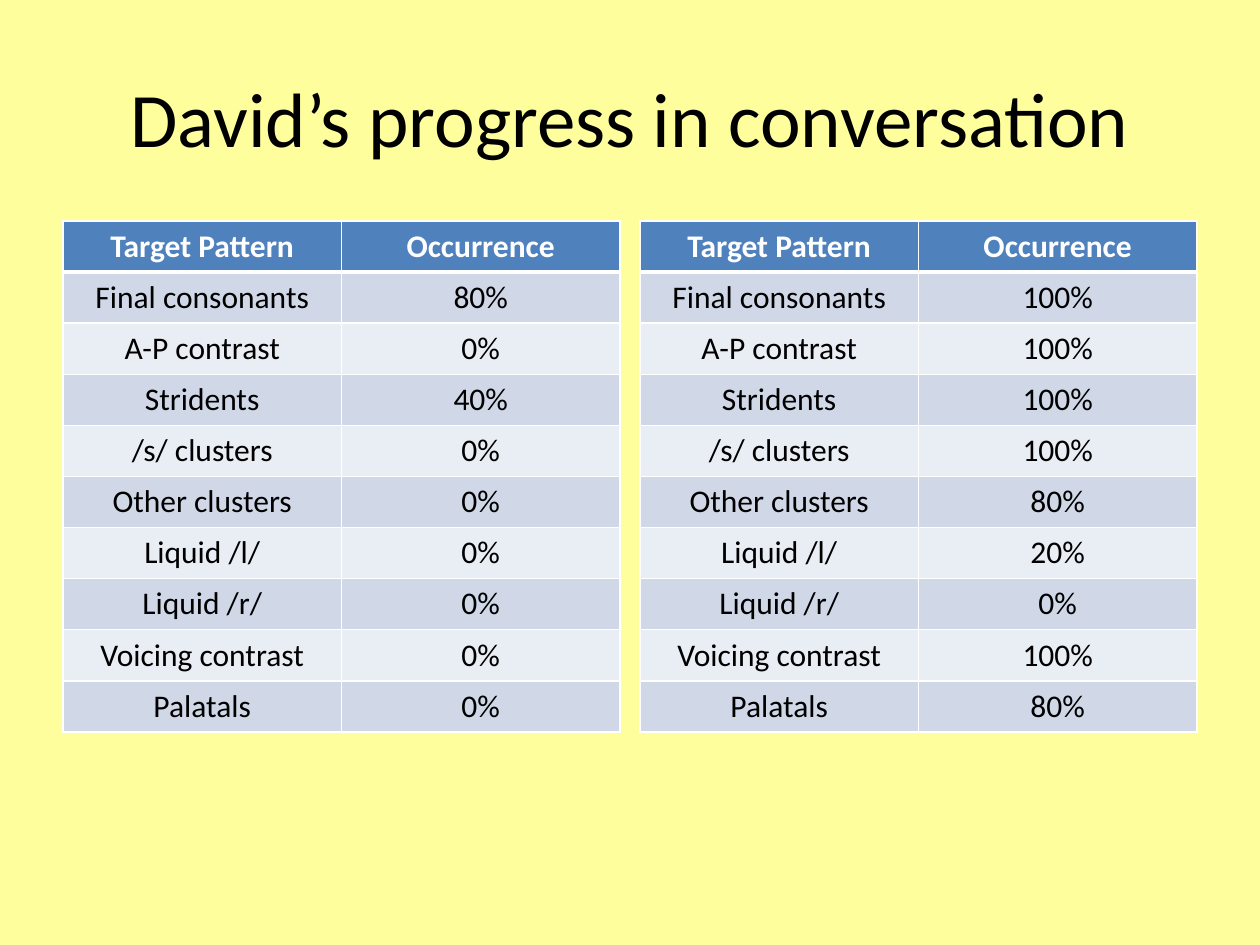
from lxml import etree
from pptx import Presentation
from pptx.dml.color import RGBColor
from pptx.enum.text import MSO_ANCHOR, PP_ALIGN
from pptx.oxml.ns import qn
from pptx.util import Pt

EMU_PER_PX = 914400 // 126
CENTER = PP_ALIGN.CENTER
MIDDLE = MSO_ANCHOR.MIDDLE

FONT = "Calibri"
PALE_YELLOW = RGBColor(0xFE, 0xFE, 0x9D)
BLACK = RGBColor(0x00, 0x00, 0x00)
WHITE = RGBColor(0xFF, 0xFF, 0xFF)
HEADER_BLUE = RGBColor(0x4F, 0x81, 0xBD)
BANDS = (RGBColor(0xD0, 0xD8, 0xE8), RGBColor(0xE9, 0xED, 0xF4))

HEADER = ("Target Pattern", "Occurrence")
PATTERNS = (
    "Final consonants", "A-P contrast", "Stridents", "/s/ clusters",
    "Other clusters", "Liquid /l/", "Liquid /r/", "Voicing contrast", "Palatals",
)
EARLIER = (80, 0, 40, 0, 0, 0, 0, 0, 0)
LATER = (100, 100, 100, 100, 80, 20, 0, 100, 80)

MARGIN = 63
TABLE_TOP = 221
TABLE_WIDTH = 557
TABLE_HEIGHT = 511
TABLE_GAP = 20


def px(length):
    return length * EMU_PER_PX


def format_text(text_frame, size, color, bold=False):
    for paragraph in text_frame.paragraphs:
        paragraph.alignment = CENTER
        for run in paragraph.runs:
            run.font.name = FONT
            run.font.size = Pt(size)
            run.font.bold = bold
            run.font.color.rgb = color


def add_title(slide, text):
    title = slide.shapes.title
    title.left, title.top = px(MARGIN), px(38)
    title.width, title.height = px(1134), px(157)
    title.text_frame.text = text
    title.text_frame.vertical_anchor = MIDDLE
    format_text(title.text_frame, 44, BLACK)


def set_borders(cell, top, bottom):
    properties = cell._tc.get_or_add_tcPr()
    for side, points in (("L", 1), ("R", 1), ("T", top), ("B", bottom)):
        border = etree.SubElement(properties, qn(f"a:ln{side}"), w=str(Pt(points)))
        fill = etree.SubElement(border, qn("a:solidFill"))
        etree.SubElement(fill, qn("a:srgbClr"), val=str(WHITE))


def format_cell(cell, row):
    is_header = row == 0
    set_borders(cell, top=3 if row == 1 else 1, bottom=3 if is_header else 1)
    cell.fill.solid()
    cell.fill.fore_color.rgb = HEADER_BLUE if is_header else BANDS[(row - 1) % 2]
    format_text(cell.text_frame, 18, WHITE if is_header else BLACK, is_header)


def add_progress_table(slide, left, percentages):
    rows = [HEADER] + [(name, f"{value}%") for name, value in zip(PATTERNS, percentages)]
    table = slide.shapes.add_table(
        len(rows), len(HEADER), px(left), px(TABLE_TOP), px(TABLE_WIDTH), px(TABLE_HEIGHT)
    ).table
    for row, texts in enumerate(rows):
        for column, text in enumerate(texts):
            cell = table.cell(row, column)
            cell.text_frame.text = text
            format_cell(cell, row)


def main():
    presentation = Presentation()
    presentation.slide_width = px(1260)
    presentation.slide_height = px(945)
    slide = presentation.slides.add_slide(presentation.slide_layouts[5])
    slide.background.fill.solid()
    slide.background.fill.fore_color.rgb = PALE_YELLOW
    add_title(slide, "David’s progress in conversation")
    for index, percentages in enumerate((EARLIER, LATER)):
        add_progress_table(slide, MARGIN + index * (TABLE_WIDTH + TABLE_GAP), percentages)
    presentation.save("out.pptx")


if __name__ == "__main__":
    main()
